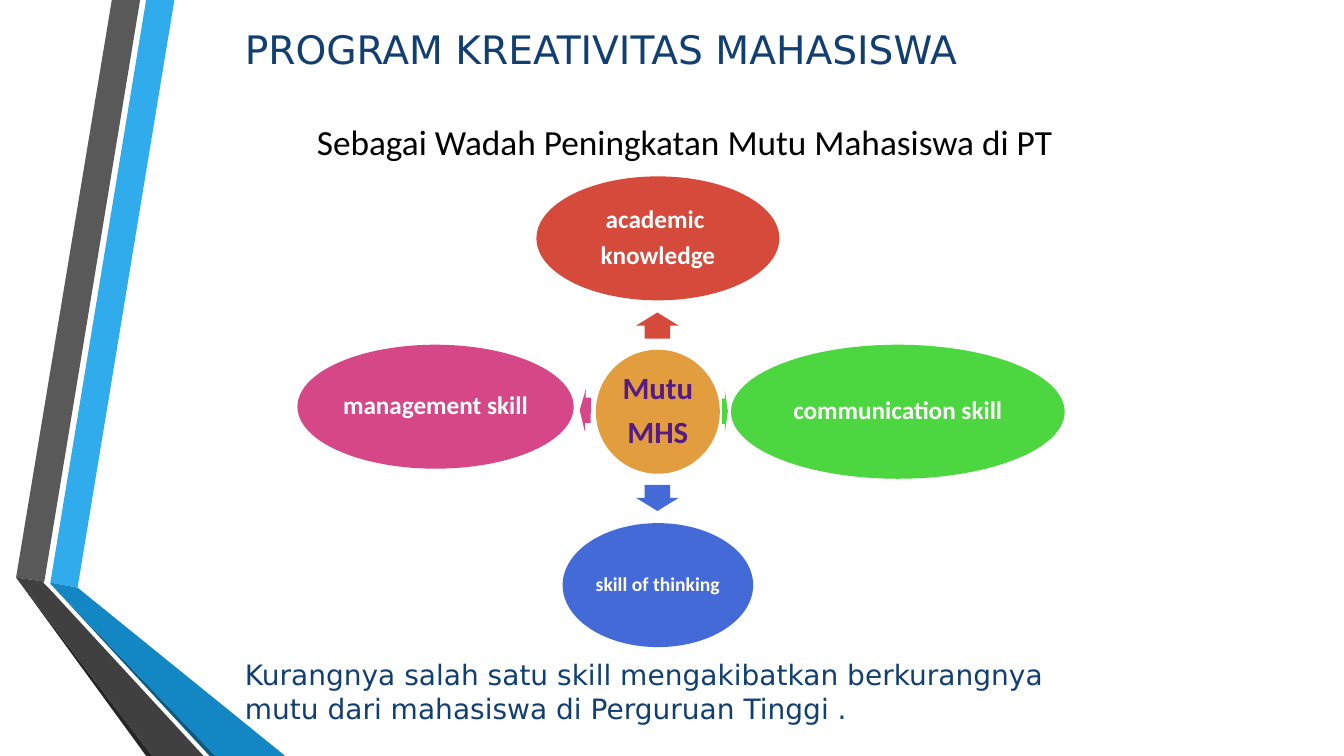
import pptx
import pptx.dml.color
import pptx.enum.shapes
import pptx.enum.text
import pptx.util
from dataclasses import dataclass

PX = 9144
ALIGN = pptx.enum.text.PP_ALIGN
SHAPE = pptx.enum.shapes.MSO_SHAPE


@dataclass(frozen=True)
class Theme:
    sans: str = "DejaVu Sans"
    body: str = "Calibri"
    navy: str = "113F71"
    black: str = "000000"
    white: str = "FFFFFF"
    purple: str = "541B89"
    orange: str = "E29D3E"
    red: str = "D64A3B"
    green: str = "4CD63F"
    blue: str = "436AD6"
    pink: str = "D64787"
    heading_size: float = 28
    subtitle_size: float = 25.2
    note_size: float = 20
    hub_size: float = 22
    skill_size: float = 18
    small_size: float = 14


THEME = Theme()

RIBBONS = [
    ("30ACEC", [(50, 578), (77, 583), (173, 0), (145, 0)]),
    ("595959", [(139, 0), (111, 0), (16, 573), (44, 577)]),
    ("262626", [(16, 573), (145, 750), (151, 750)]),
    ("0C5A82", [(50, 579), (208, 750), (214, 750)]),
    ("1287C3", [(50, 578), (50, 579), (214, 750), (283, 750), (77, 583)]),
    ("404040", [(202, 750), (48, 583), (43, 578), (44, 577), (16, 573), (151, 750)]),
]

SKILLS = [
    (["academic ", "knowledge"], (532, 175, 241, 123), THEME.red, THEME.skill_size),
    (["communication skill"], (725, 342, 331, 133), THEME.green, THEME.skill_size),
    (["skill of thinking"], (558, 519, 189, 123), THEME.blue, THEME.small_size),
    (["management skill"], (295, 342, 274, 123), THEME.pink, THEME.skill_size),
]

ARROWS = [
    ((639, 302, 26, 42), 270, THEME.red),
    ((716, 387, 6, 42), 0, THEME.green),
    ((639, 473, 26, 42), 90, THEME.blue),
    ((575, 386, 11, 42), 181.4, THEME.pink),
]


def rgb(color):
    return pptx.dml.color.RGBColor.from_string(color)


def to_emu(frame):
    return [value * PX for value in frame]


def paint(shape, color):
    shape.shadow.inherit = False
    shape.fill.solid()
    shape.fill.fore_color.rgb = rgb(color)
    shape.line.fill.background()


def write(shape, lines, font, size, color, align, bold=False):
    frame = shape.text_frame
    frame.word_wrap = True
    frame.vertical_anchor = pptx.enum.text.MSO_ANCHOR.MIDDLE
    frame.text = "\n".join(lines)
    for para in frame.paragraphs:
        para.alignment = align
        for span in para.runs:
            span.font.name = font
            span.font.size = pptx.util.Pt(size)
            span.font.bold = bold
            span.font.color.rgb = rgb(color)


def add_ribbon(page, color, points):
    builder = page.shapes.build_freeform(*points[0], scale=PX)
    builder.add_line_segments(points[1:], close=True)
    paint(builder.convert_to_shape(), color)


def add_text(page, text, frame, font, size, color, align=ALIGN.LEFT):
    box = page.shapes.add_textbox(*to_emu(frame))
    write(box, [text], font, size, color, align)


def add_bubble(page, lines, frame, fill, size, color=THEME.white):
    bubble = page.shapes.add_shape(SHAPE.OVAL, *to_emu(frame))
    paint(bubble, fill)
    write(bubble, lines, THEME.body, size, color, ALIGN.CENTER, bold=True)
    text = bubble.text_frame
    text.margin_left = text.margin_right = text.margin_top = text.margin_bottom = 3 * PX
    for para in text.paragraphs:
        para.line_spacing = 0.9
    for para in text.paragraphs[:-1]:
        para.space_after = pptx.util.Pt(round(size * 0.35, 1))


def add_arrow(page, frame, angle, color):
    arrow = page.shapes.add_shape(SHAPE.RIGHT_ARROW, *to_emu(frame))
    arrow.adjustments[0] = 0.6
    arrow.adjustments[1] = 0.5
    arrow.rotation = angle
    paint(arrow, color)


def main():
    deck = pptx.Presentation()
    deck.slide_width, deck.slide_height = to_emu((1333, 750))
    page = deck.slides.add_slide(deck.slide_layouts[6])

    for color, points in RIBBONS:
        add_ribbon(page, color, points)

    add_text(page, "Sebagai Wadah Peningkatan Mutu Mahasiswa di PT", (250, 117, 858, 47),
             THEME.body, THEME.subtitle_size, THEME.black, ALIGN.CENTER)
    add_text(page, "PROGRAM KREATIVITAS MAHASISWA", (233, 17, 850, 62),
             THEME.sans, THEME.heading_size, THEME.navy)

    add_bubble(page, ["Mutu", "MHS"], (591, 347, 123, 123), THEME.orange, THEME.hub_size, THEME.purple)
    for arrow in ARROWS:
        add_arrow(page, *arrow)
    for skill in SKILLS:
        add_bubble(page, *skill)

    add_text(page, "Kurangnya salah satu skill mengakibatkan berkurangnya mutu dari mahasiswa "
             "di Perguruan Tinggi .", (233, 655, 867, 62),
             THEME.sans, THEME.note_size, THEME.navy)
    deck.save("out.pptx")


if __name__ == "__main__":
    main()
